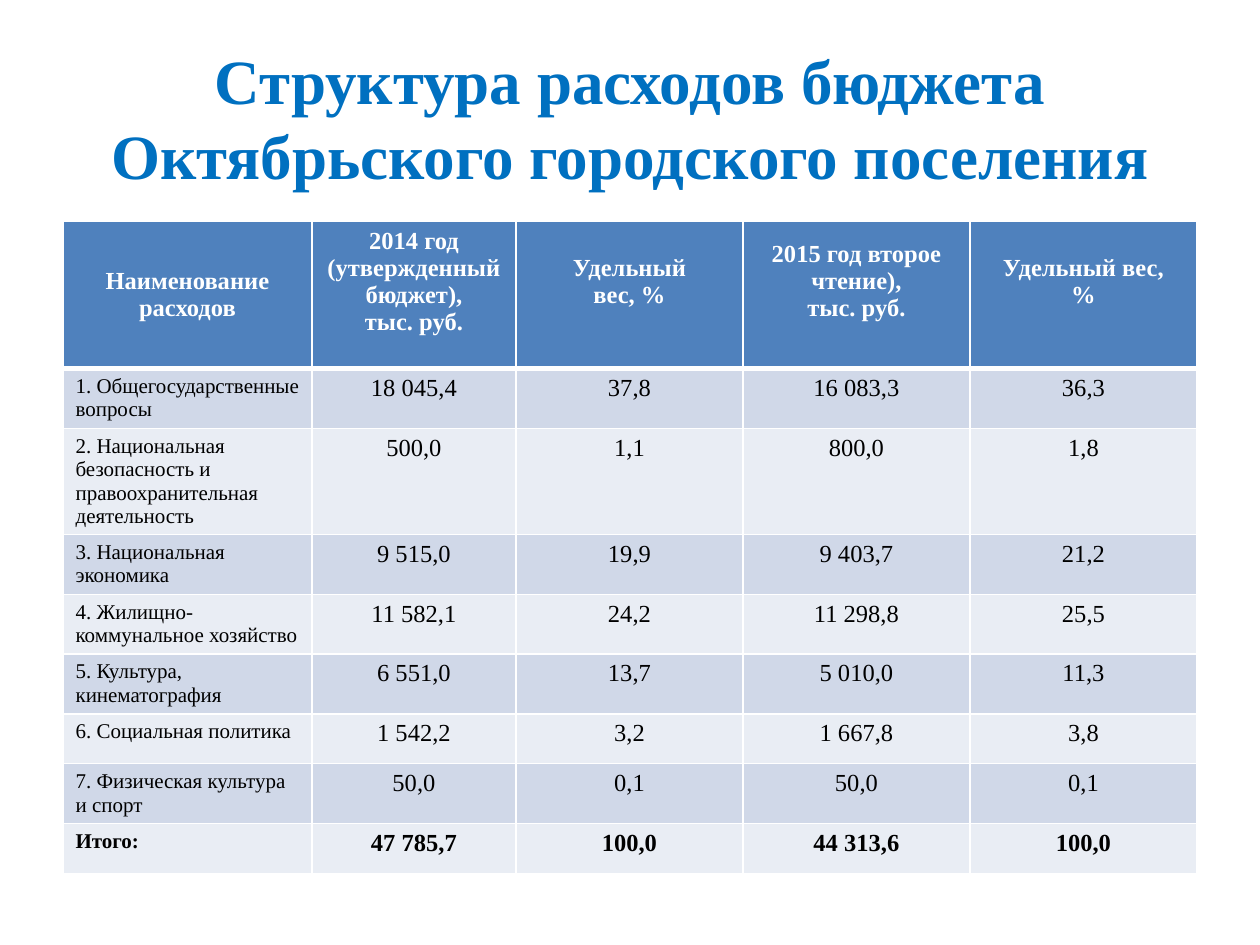
from dataclasses import dataclass

import lxml.etree
import pptx
import pptx.dml.color
import pptx.enum.text
import pptx.oxml.ns
import pptx.util

PX = 914400 / 126


@dataclass(frozen=True)
class Theme:
    font: str = "Times New Roman"
    title: str = "0070C0"
    header: str = "4F81BD"
    bands: tuple = ("D0D8E8", "E9EDF4")
    white: str = "FFFFFF"
    black: str = "000000"
    title_size: int = 36
    value_size: int = 14
    name_size: int = 12


theme = Theme()
rgb = pptx.dml.color.RGBColor.from_string
center = pptx.enum.text.PP_ALIGN.CENTER
left = pptx.enum.text.PP_ALIGN.LEFT
middle = pptx.enum.text.MSO_ANCHOR.MIDDLE
top = pptx.enum.text.MSO_ANCHOR.TOP


def px(length):
    return pptx.util.Emu(round(length * PX))


def style_text(frame, size, color, bold, align):
    for paragraph in frame.paragraphs:
        paragraph.alignment = align
        paragraph.font.name = theme.font
        paragraph.font.size = pptx.util.Pt(size)
        paragraph.font.bold = bold
        paragraph.font.color.rgb = rgb(color)


presentation = pptx.Presentation()
presentation.slide_width, presentation.slide_height = px(1260), px(945)
slide = presentation.slides.add_slide(presentation.slide_layouts[5])

# Title
title = slide.shapes.title
title.left, title.top, title.width, title.height = px(63), px(38), px(1134), px(158)
title.text_frame.text = "Структура расходов бюджета Октябрьского городского поселения"
title.text_frame.word_wrap = True
title.text_frame.auto_size = pptx.enum.text.MSO_AUTO_SIZE.NONE
title.text_frame.vertical_anchor = middle
style_text(title.text_frame, theme.title_size, theme.title, True, center)

# Budget figures
budget = [
    ("Наименование расходов", "2014 год\n(утвержденный\nбюджет),\nтыс. руб.", "Удельный\nвес, %",
     "2015 год второе\nчтение),\nтыс. руб.", "Удельный вес,\n%"),
    ("1. Общегосударственные вопросы", "18 045,4", "37,8", "16 083,3", "36,3"),
    ("2. Национальная безопасность и правоохранительная\nдеятельность",
     "500,0", "1,1", "800,0", "1,8"),
    ("3. Национальная экономика", "9 515,0", "19,9", "9 403,7", "21,2"),
    ("4. Жилищно-\nкоммунальное хозяйство", "11 582,1", "24,2", "11 298,8", "25,5"),
    ("5. Культура, кинематография", "6 551,0", "13,7", "5 010,0", "11,3"),
    ("6. Социальная политика", "1 542,2", "3,2", "1 667,8", "3,8"),
    ("7. Физическая культура и спорт", "50,0", "0,1", "50,0", "0,1"),
    ("Итого:", "47 785,7", "100,0", "44 313,6", "100,0"),
]
column_widths = [249, 204, 227, 227, 227]
row_heights = [147, 60, 105, 60, 59, 60, 50, 60, 50]
last_row = len(budget) - 1

# Expenditure table
expenses = slide.shapes.add_table(
    len(budget), len(column_widths), px(63), px(221),
    px(sum(column_widths)), px(sum(row_heights))).table
for column, width in zip(expenses.columns, column_widths):
    column.width = px(width)
for row, height in zip(expenses.rows, row_heights):
    row.height = px(height)

for r, entries in enumerate(budget):
    is_header = r == 0
    for c, entry in enumerate(entries):
        cell = expenses.cell(r, c)
        cell.text = entry
        is_name = c == 0 and not is_header
        style_text(
            cell.text_frame,
            theme.name_size if is_name else theme.value_size,
            theme.white if is_header else theme.black,
            r in (0, last_row),
            left if is_name else center)
        cell.vertical_anchor = middle if is_header else top
        if is_header and c > 0:
            cell.margin_bottom = px(33)  # lifts the period headings

        # White rules, heavier under the header
        properties = cell._tc.get_or_add_tcPr()
        heavy_side = {0: "lnB", 1: "lnT"}.get(r)
        for side in ("lnL", "lnR", "lnT", "lnB"):
            rule = lxml.etree.SubElement(properties, pptx.oxml.ns.qn(f"a:{side}"))
            rule.set("w", str(pptx.util.Pt(3 if side == heavy_side else 1)))
            paint = lxml.etree.SubElement(rule, pptx.oxml.ns.qn("a:solidFill"))
            lxml.etree.SubElement(paint, pptx.oxml.ns.qn("a:srgbClr")).set("val", theme.white)

        cell.fill.solid()
        cell.fill.fore_color.rgb = rgb(theme.header if is_header else theme.bands[(r - 1) % 2])

presentation.save("out.pptx")
